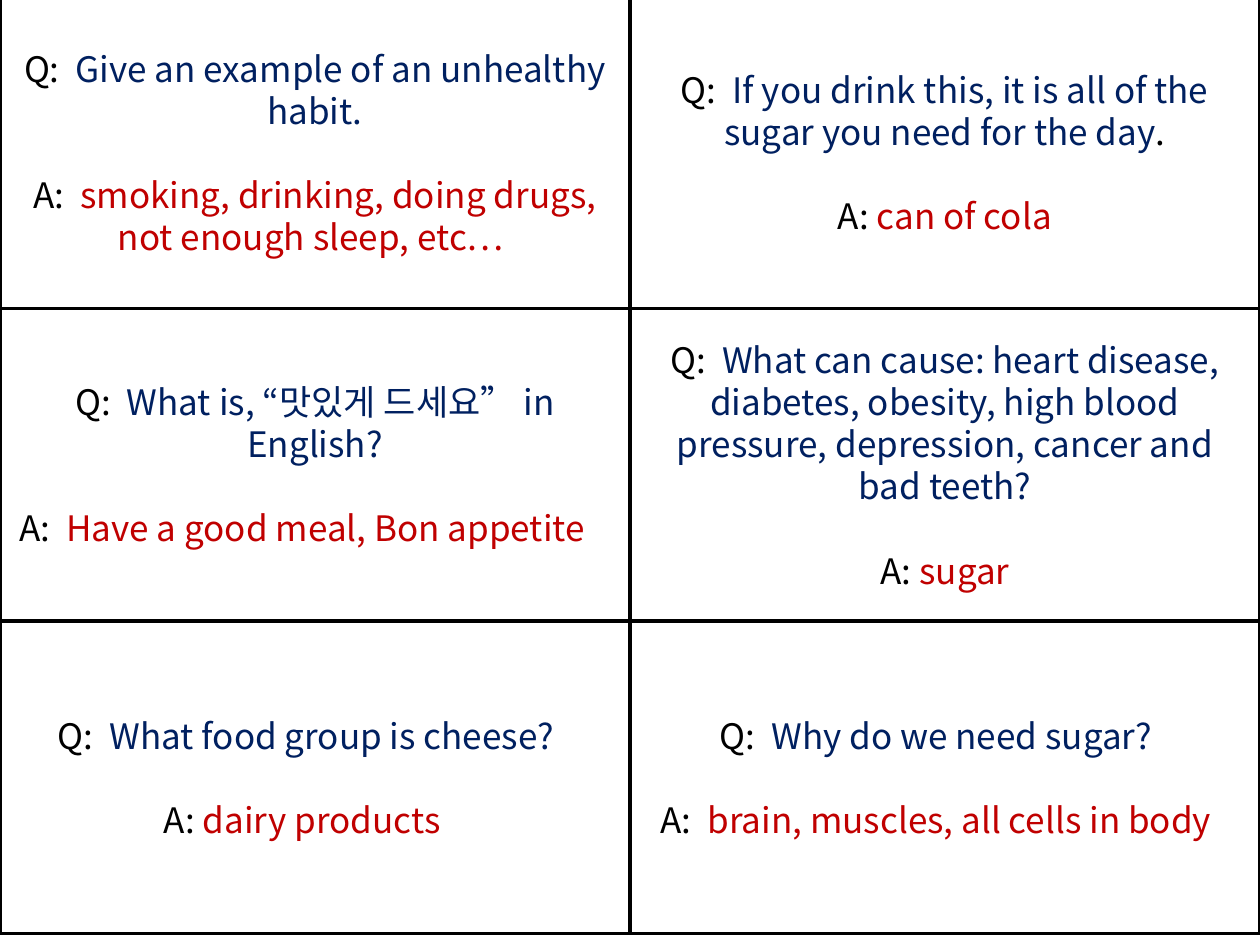
from lxml.etree import SubElement
from pptx import Presentation
from pptx.dml.color import RGBColor
from pptx.enum.shapes import MSO_SHAPE
from pptx.enum.text import MSO_ANCHOR, MSO_AUTO_SIZE, PP_ALIGN
from pptx.oxml.ns import qn
from pptx.util import Inches, Pt

THEME = {
    "font": "Noto Sans CJK KR",
    "size": Pt(20),
    "leading": Pt(24),
    "border": Pt(2),
    "paper": RGBColor(0xFF, 0xFF, 0xFF),
    "label": RGBColor(0, 0, 0),
    "question": RGBColor(0x00, 0x20, 0x60),
    "answer": RGBColor(0xC0, 0, 0),
}

COLUMNS = [
    [
        {"question": [("Q:  ", "label"), ("Give an example of an unhealthy habit.", "question")],
         "answer": [("A:  ", "label"), ("smoking, drinking, doing drugs, not enough sleep, etc… ", "answer")]},
        {"question": [("Q:  ", "label"), ("What is, “맛있게 드세요” in English?", "question")],
         "answer": [("A:  ", "label"), ("Have a good meal, Bon appetite", "answer")],
         "answer_indent": 0.2},
        {"question": [("Q:  ", "label"), ("What food group is cheese?", "question")],
         "answer": [("A: ", "label"), ("dairy products ", "answer")],
         "question_indent": 0.14},
    ],
    [
        {"question": [("Q:  ", "label"),
                      ("If you drink this, it is all of the sugar you need for the day", "question"),
                      (".", "label")],
         "answer": [("A: ", "label"), ("can of cola", "answer")]},
        {"question": [("Q:  ", "label"),
                      ("What can cause: heart disease, diabetes, obesity, high blood pressure, "
                       "depression, cancer and bad teeth?", "question")],
         "answer": [("A: ", "label"), ("sugar", "answer")]},
        {"question": [("Q:  ", "label"), ("Why do we need sugar?", "question")],
         "answer": [("A:  ", "label"), ("brain, muscles, all cells in body", "answer")],
         "question_indent": 0.14},
    ],
]

CARD_WIDTH, CARD_HEIGHT, TOP = 5, 2.48, -0.03


def write_paragraph(para, spans, right_indent):
    para.alignment = PP_ALIGN.CENTER
    para.line_spacing = THEME["leading"]
    para.space_before = para.space_after = Pt(0)
    if right_indent:
        para._p.get_or_add_pPr().set("marR", str(Inches(right_indent)))
    for text, role in spans:
        span = para.add_run()
        span.text = text
        span.font.size = THEME["size"]
        span.font.color.rgb = THEME[role]
        span.font.name = THEME["font"]
        SubElement(span._r.get_or_add_rPr(), qn("a:ea"), typeface=THEME["font"])


def fill_card(box, card):
    box.fill.solid()
    box.fill.fore_color.rgb = THEME["paper"]
    box.line.color.rgb = THEME["label"]
    box.line.width = THEME["border"]
    frame = box.text_frame
    frame.word_wrap = True
    frame.auto_size = MSO_AUTO_SIZE.NONE
    frame.vertical_anchor = MSO_ANCHOR.MIDDLE
    write_paragraph(frame.paragraphs[0], card["question"], card.get("question_indent"))
    answer = frame.add_paragraph()
    write_paragraph(answer, card["answer"], card.get("answer_indent"))
    answer.space_before = THEME["leading"]


deck = Presentation()
deck.slide_width, deck.slide_height = Inches(10), Inches(7.5)
page = deck.slides.add_slide(deck.slide_layouts[0])
subtitle = page.placeholders[1]
subtitle.element.getparent().remove(subtitle.element)

for column, cards in enumerate(COLUMNS):
    for row, card in enumerate(cards):
        place = [Inches(value) for value in
                 (column * CARD_WIDTH, TOP + row * CARD_HEIGHT, CARD_WIDTH, CARD_HEIGHT)]
        if column == row == 0:
            box = page.shapes.title
            box.left, box.top, box.width, box.height = place
        else:
            box = page.shapes.add_shape(MSO_SHAPE.RECTANGLE, *place)
            box.shadow.inherit = False
        fill_card(box, card)

deck.save("out.pptx")
